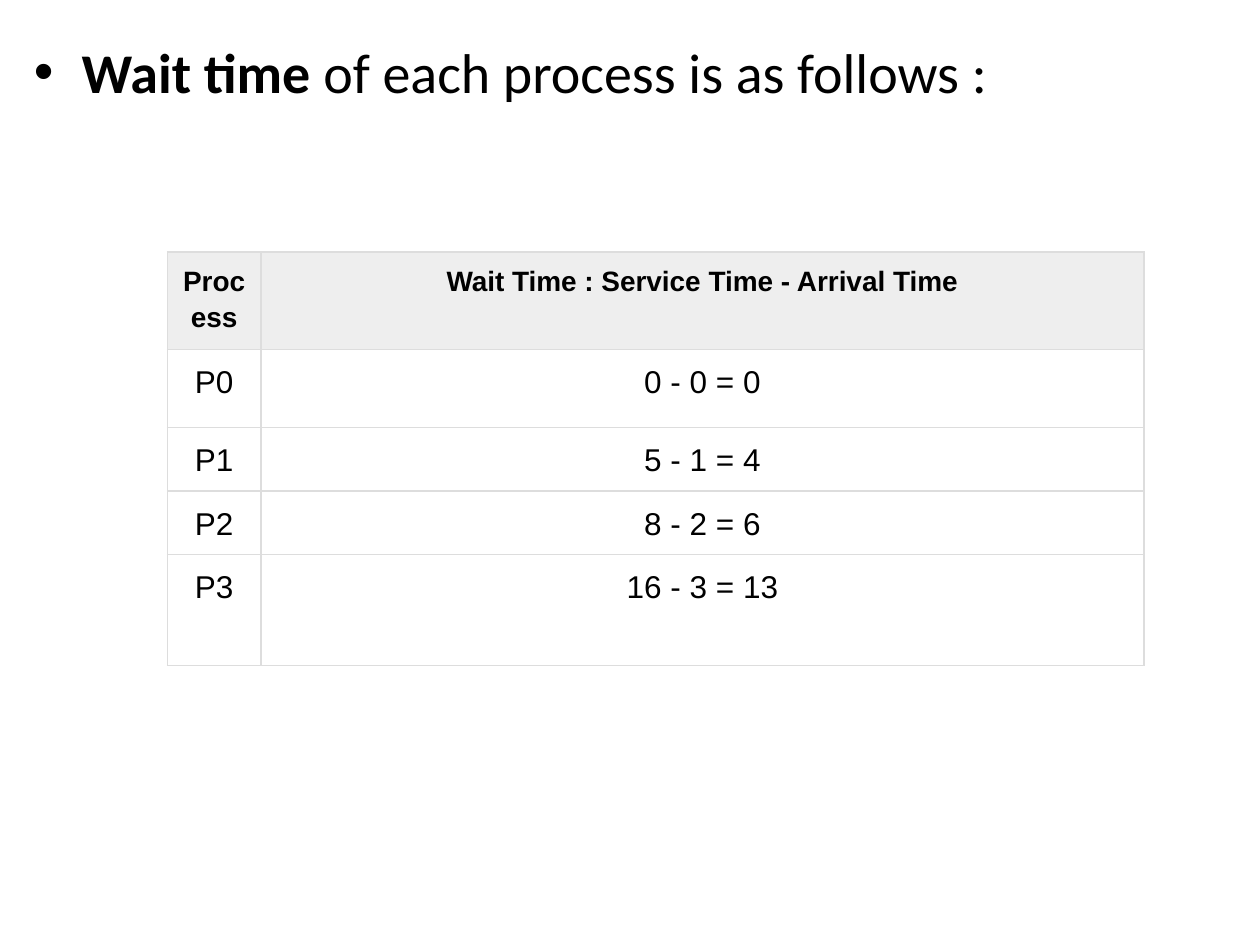
from typing import NamedTuple

from lxml.etree import SubElement
from pptx import Presentation
from pptx.dml.color import RGBColor
from pptx.enum.text import PP_ALIGN
from pptx.oxml.ns import qn
from pptx.util import Inches, Pt

BLACK = RGBColor(0x00, 0x00, 0x00)
HEADER_GRAY = RGBColor(0xEE, 0xEE, 0xEE)
BORDER_GRAY = RGBColor(0xDD, 0xDD, 0xDD)


class ProcessRow(NamedTuple):
    process: str
    wait_time: str
    height: float


HEADER = ProcessRow("Process", "Wait Time : Service Time - Arrival Time", 0.69)
PROCESSES = [
    ProcessRow("P0", "0 - 0 = 0", 0.62),
    ProcessRow("P1", "5 - 1 = 4", 0.45),
    ProcessRow("P2", "8 - 2 = 6", 0.45),
    ProcessRow("P3", "16 - 3 = 13", 0.88),
]
COLUMN_WIDTHS = [0.74, 7.01]


def add_heading(slide) -> None:
    box = slide.shapes.add_textbox(Inches(0.17), Inches(0.25), Inches(9.67), Inches(7))
    box.text_frame.word_wrap = True
    para = box.text_frame.paragraphs[0]
    para.font.name = "Calibri"
    para.font.size = Pt(32)
    para.font.color.rgb = BLACK
    for text, bold in [("Wait time", True), (" of each process is as follows :", False)]:
        span = para.add_run()
        span.text = text
        span.font.bold = bold
    add_bullet(para)


def add_bullet(para) -> None:
    """Give the paragraph a hanging bullet and 20% space before."""
    properties = para._p.get_or_add_pPr()
    properties.set("marL", str(Inches(0.38)))
    properties.set("indent", str(-Inches(0.38)))
    space_before = properties.makeelement(qn("a:spcBef"))
    SubElement(space_before, qn("a:spcPct"), val="20000")
    bullet_font = properties.makeelement(qn("a:buFont"), typeface="Arial")
    bullet = properties.makeelement(qn("a:buChar"), char="•")
    for index, element in enumerate([space_before, bullet_font, bullet]):
        properties.insert(index, element)


def add_borders(cell) -> None:
    properties = cell._tc.get_or_add_tcPr()
    for side in ("a:lnL", "a:lnR", "a:lnT", "a:lnB"):
        line = SubElement(properties, qn(side), w=str(Pt(1)))
        fill = SubElement(line, qn("a:solidFill"))
        SubElement(fill, qn("a:srgbClr"), val=str(BORDER_GRAY))


def write_cell(cell, text: str, is_header: bool) -> None:
    add_borders(cell)
    if is_header:
        cell.fill.solid()
        cell.fill.fore_color.rgb = HEADER_GRAY
    else:
        cell.fill.background()
    cell.margin_left = cell.margin_right = Inches(0.08)
    cell.margin_top = cell.margin_bottom = Inches(0.08)
    cell.text = text
    para = cell.text_frame.paragraphs[0]
    para.alignment = PP_ALIGN.CENTER
    para.line_spacing = 1.15
    para.space_after = Pt(15)
    para.font.name = "Arial"
    para.font.size = Pt(16 if is_header else 18)
    para.font.bold = is_header
    para.font.color.rgb = BLACK


def add_wait_table(slide) -> None:
    rows = [HEADER, *PROCESSES]
    table = slide.shapes.add_table(
        len(rows), len(COLUMN_WIDTHS), Inches(1.33), Inches(2), Inches(7.75), Inches(3.29)
    ).table
    table.first_row = False
    table.horz_banding = False
    for column, width in zip(table.columns, COLUMN_WIDTHS):
        column.width = Inches(width)
    for index, row in enumerate(rows):
        table.rows[index].height = Inches(row.height)
        for column_index, text in enumerate([row.process, row.wait_time]):
            write_cell(table.cell(index, column_index), text, row is HEADER)


def main() -> None:
    deck = Presentation()
    deck.slide_width = Inches(10)
    deck.slide_height = Inches(7.5)
    slide = deck.slides.add_slide(deck.slide_layouts[6])
    add_heading(slide)
    add_wait_table(slide)
    deck.save("out.pptx")


if __name__ == "__main__":
    main()
